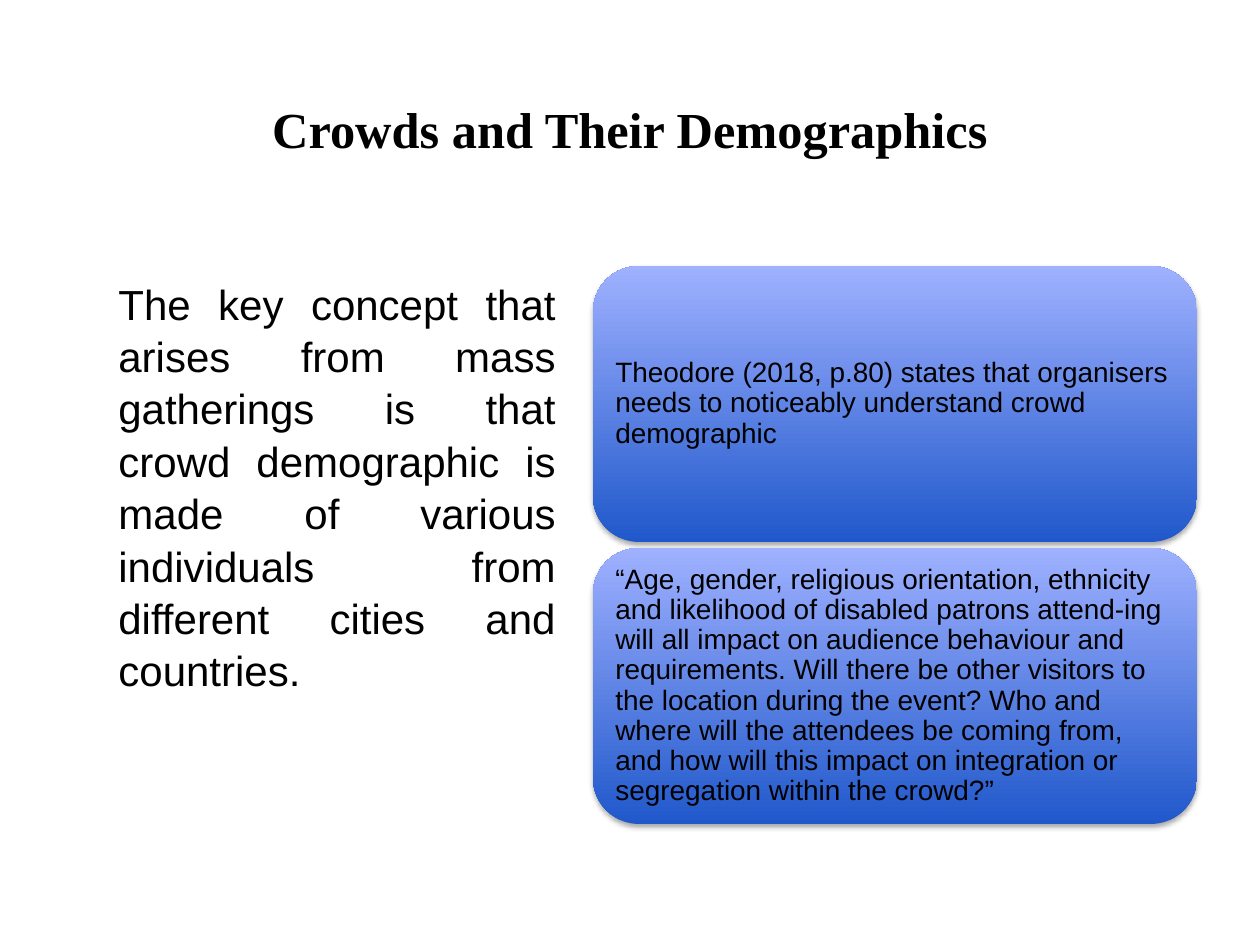
from dataclasses import dataclass

from lxml import etree
from pptx import Presentation
from pptx.dml.color import RGBColor
from pptx.enum.shapes import MSO_SHAPE
from pptx.enum.text import MSO_ANCHOR, PP_ALIGN
from pptx.oxml.ns import qn
from pptx.util import Emu, Pt

SCALE = 914400 / 126
BLACK = RGBColor(0x00, 0x00, 0x00)
DARK = RGBColor(0x20, 0x58, 0xCB)
LIGHT = RGBColor(0x9F, 0xB1, 0xFF)
ROUND = MSO_SHAPE.ROUNDED_RECTANGLE
TOP, MIDDLE, BOTTOM = MSO_ANCHOR.TOP, MSO_ANCHOR.MIDDLE, MSO_ANCHOR.BOTTOM
LEFT, CENTER, JUSTIFY = PP_ALIGN.LEFT, PP_ALIGN.CENTER, PP_ALIGN.JUSTIFY

CARD_X, CARD_Y, CARD_W, CARD_H, CARD_STEP = 593, 266, 604, 276, 282
CARD_PAD = 9


@dataclass
class Box:
    x: int
    y: int
    w: int
    h: int


@dataclass
class Style:
    size: float
    font: str = "Arial"
    bold: bool = False
    align: PP_ALIGN = LEFT
    anchor: MSO_ANCHOR = TOP
    pitch: float = 1.0


TITLE = Style(28.8, "Times New Roman", True, CENTER, BOTTOM)
BODY = Style(24, align=JUSTIFY, pitch=1.04)
CARD = Style(16, anchor=MIDDLE, pitch=0.9)

CARDS = [
    "Theodore (2018, p.80) states that organisers needs to noticeably "
    "understand crowd demographic",
    "“Age, gender, religious orientation, ethnicity and likelihood of "
    "disabled patrons attend-ing will all impact on audience behaviour and "
    "requirements. Will there be other visitors to the location during the "
    "event? Who and where will the attendees be coming from, and how will "
    "this impact on integration or segregation within the crowd?”",
]


def px(n: float) -> Emu:
    return Emu(round(n * SCALE))


def place(box: Box) -> list[Emu]:
    return [px(n) for n in (box.x, box.y, box.w, box.h)]


def assign(target, values: dict) -> None:
    for name, value in values.items():
        setattr(target, name, value)


def write(frame, text: str, style: Style) -> None:
    assign(frame, {"word_wrap": True, "vertical_anchor": style.anchor})
    para = frame.paragraphs[0]
    assign(para, {"alignment": style.align, "line_spacing": style.pitch})
    run = para.add_run()
    run.text = text
    assign(run.font, {"name": style.font, "size": Pt(style.size),
                      "bold": style.bold})
    run.font.color.rgb = BLACK


def add_text(slide, box: Box, text: str, style: Style) -> None:
    write(slide.shapes.add_textbox(*place(box)).text_frame, text, style)


def cast_shadow(shape) -> None:
    """Add a soft shadow just below the shape."""
    shape.shadow.inherit = False
    effects = shape._element.spPr.find(qn("a:effectLst"))
    outer = etree.SubElement(effects, qn("a:outerShdw"), blurRad="40000",
                             dist="23000", dir="5400000", rotWithShape="0")
    color = etree.SubElement(outer, qn("a:srgbClr"), val="000000")
    etree.SubElement(color, qn("a:alpha"), val="35000")


def add_card(slide, box: Box, text: str) -> None:
    card = slide.shapes.add_shape(ROUND, *place(box))
    card.line.fill.background()
    card.fill.gradient()
    card.fill.gradient_angle = 90
    for stop, color in zip(card.fill.gradient_stops, (DARK, LIGHT)):
        stop.color.rgb = color
    cast_shadow(card)
    sides = ("left", "top", "right", "bottom")
    assign(card.text_frame, {f"margin_{s}": px(CARD_PAD) for s in sides})
    write(card.text_frame, text, CARD)


def main() -> None:
    deck = Presentation()
    assign(deck, {"slide_width": px(1260), "slide_height": px(945)})
    slide = deck.slides.add_slide(deck.slide_layouts[6])
    add_text(slide, Box(106, 270, 462, 527),
             "The key concept that arises from mass gatherings is that crowd "
             "demographic is made of various individuals from different "
             "cities and countries.", BODY)
    for i, text in enumerate(CARDS):
        box = Box(CARD_X, CARD_Y + i * CARD_STEP, CARD_W, CARD_H)
        add_card(slide, box, text)
    add_text(slide, Box(63, 38, 1134, 127),
             "Crowds and Their Demographics", TITLE)
    deck.save("out.pptx")


if __name__ == "__main__":
    main()
